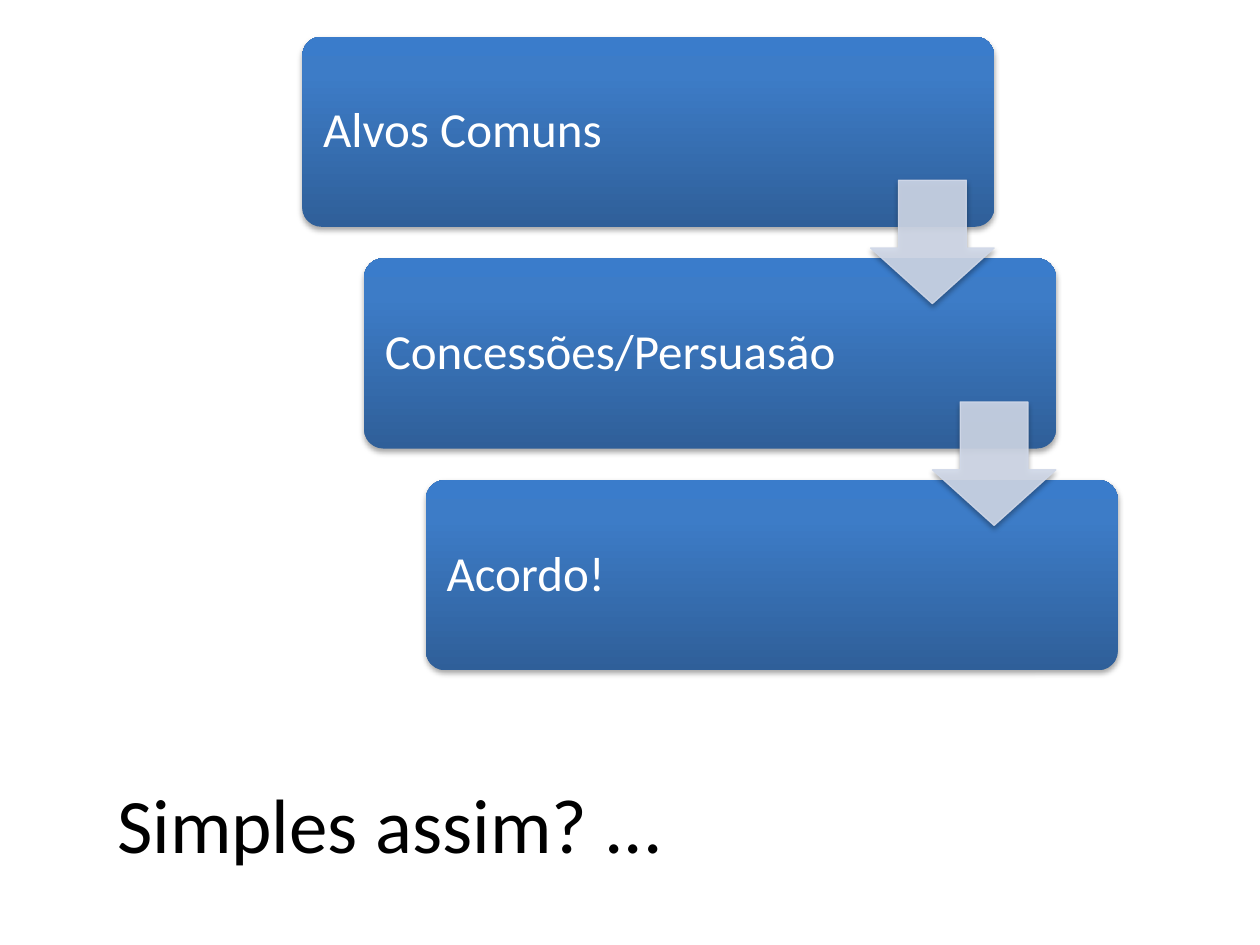
from copy import deepcopy

from lxml import etree
from pptx import Presentation
from pptx.dml.color import RGBColor
from pptx.enum.shapes import MSO_SHAPE
from pptx.enum.text import MSO_ANCHOR, PP_ALIGN
from pptx.oxml.ns import qn
from pptx.util import Inches, Pt

ROUNDED, DOWN_ARROW = MSO_SHAPE.ROUNDED_RECTANGLE, MSO_SHAPE.DOWN_ARROW
LEFT, TOP, MIDDLE = PP_ALIGN.LEFT, MSO_ANCHOR.TOP, MSO_ANCHOR.MIDDLE

STEPS = ["Alvos Comuns", "Concessões/Persuasão", "Acordo!"]
STEP_GRADIENT = [(0, "2F5F99"), (0.8, "3D7CC7"), (1, "3A7CCB")]
ARROW_COLOR = "D0D8E8"

STEP_X, STEP_Y = 2.4, 0.29
STEP_W, STEP_H = 5.49, 1.51
SHIFT_X, SHIFT_Y = 0.49, 1.76
ARROW_SIZE = 0.98
ARROW_DROP = 1.14


def rgb(color):
    return RGBColor.from_string(color)


def add_child(parent, tag, **attributes):
    child = etree.SubElement(parent, qn(tag))
    for name, value in attributes.items():
        child.set(name, str(value))
    return child


def set_alpha(fill_parent, percent):
    color = fill_parent.find(qn("a:solidFill")).find(qn("a:srgbClr"))
    add_child(color, "a:alpha", val=percent * 1000)


def add_shadow(shape):
    shape.shadow.inherit = False
    effects = shape._element.spPr.find(qn("a:effectLst"))
    shadow = add_child(effects, "a:outerShdw", blurRad=Pt(3.1), dist=Pt(1.8),
                       dir=90 * 60000, rotWithShape=0)
    color = add_child(shadow, "a:srgbClr", val="000000")
    add_child(color, "a:alpha", val=35000)


def fill_gradient(shape, stops):
    """Fill from bottom to top with any number of (position, colour) stops."""
    fill = shape.fill
    fill.gradient()
    fill.gradient_angle = 90
    gs_list = shape._element.spPr.find(qn("a:gradFill")).find(qn("a:gsLst"))
    while len(gs_list) < len(stops):
        gs_list.append(deepcopy(gs_list[-1]))
    for stop, (position, color) in zip(fill.gradient_stops, stops):
        stop.position = position
        stop.color.rgb = rgb(color)


def add_text(tf, text, size, color):
    p = tf.paragraphs[0]
    p.alignment = LEFT
    r = p.add_run()
    r.text = text
    r.font.size = Pt(size)
    r.font.name = "Calibri"
    r.font.color.rgb = rgb(color)
    return p


def add_step(s, x, y, text):
    sp = s.shapes.add_shape(ROUNDED, Inches(x), Inches(y),
                            Inches(STEP_W), Inches(STEP_H))
    sp.adjustments[0] = 0.1
    fill_gradient(sp, STEP_GRADIENT)
    sp.line.fill.background()
    add_shadow(sp)
    tf = sp.text_frame
    tf.word_wrap = True
    tf.vertical_anchor = MIDDLE
    tf.margin_left = tf.margin_right = Inches(0.12)
    tf.margin_top = tf.margin_bottom = Inches(0.12)
    p = add_text(tf, text, 28, "FFFFFF")
    p.line_spacing = 0.9


def add_arrow(s, x, y):
    sp = s.shapes.add_shape(DOWN_ARROW, Inches(x), Inches(y),
                            Inches(ARROW_SIZE), Inches(ARROW_SIZE))
    sp.adjustments[0] = 0.55
    sp.adjustments[1] = 0.45
    sp.fill.solid()
    sp.fill.fore_color.rgb = rgb(ARROW_COLOR)
    sp.line.color.rgb = rgb(ARROW_COLOR)
    sp.line.width = Pt(0.75)
    spPr = sp._element.spPr
    for fill_parent in (spPr, spPr.find(qn("a:ln"))):
        set_alpha(fill_parent, 90)
    add_shadow(sp)


def set_title(s, text):
    title = s.shapes.title
    title.left, title.top = Inches(0.83), Inches(6.11)
    title.width, title.height = Inches(8.58), Inches(0.84)
    tf = title.text_frame
    tf.word_wrap = True
    tf.vertical_anchor = TOP
    add_text(tf, text, 44, "000000")


def main():
    prs = Presentation()
    prs.slide_width, prs.slide_height = Inches(10), Inches(7.5)
    s = prs.slides.add_slide(prs.slide_layouts.get_by_name("Title Only"))

    corners = [(STEP_X + i * SHIFT_X, STEP_Y + i * SHIFT_Y)
               for i in range(len(STEPS))]
    for (x, y), text in zip(corners, STEPS):
        add_step(s, x, y, text)
    for x, y in corners[:-1]:
        add_arrow(s, x + STEP_W - ARROW_SIZE, y + ARROW_DROP)
    set_title(s, "Simples assim? ...")

    prs.save("out.pptx")


if __name__ == "__main__":
    main()
